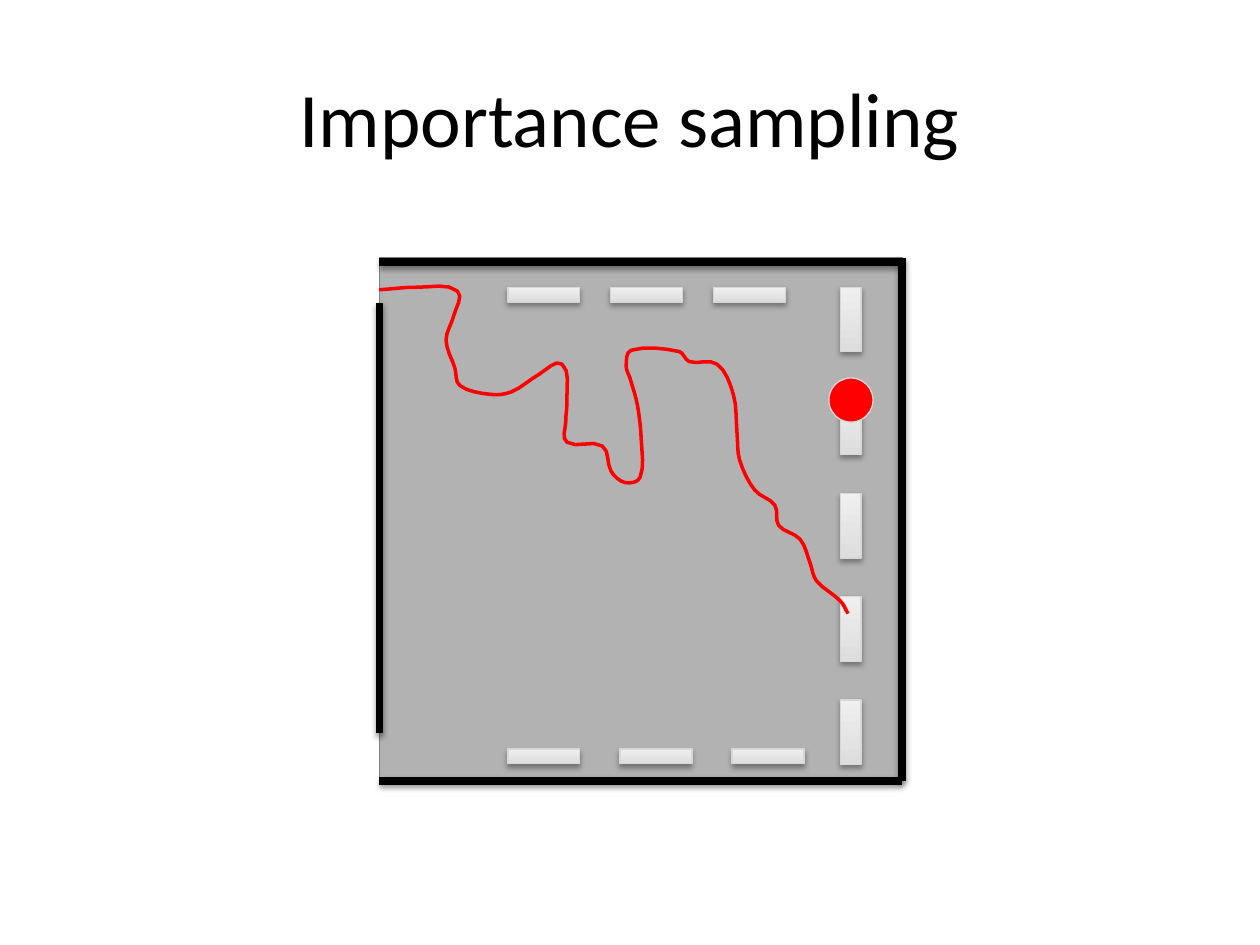
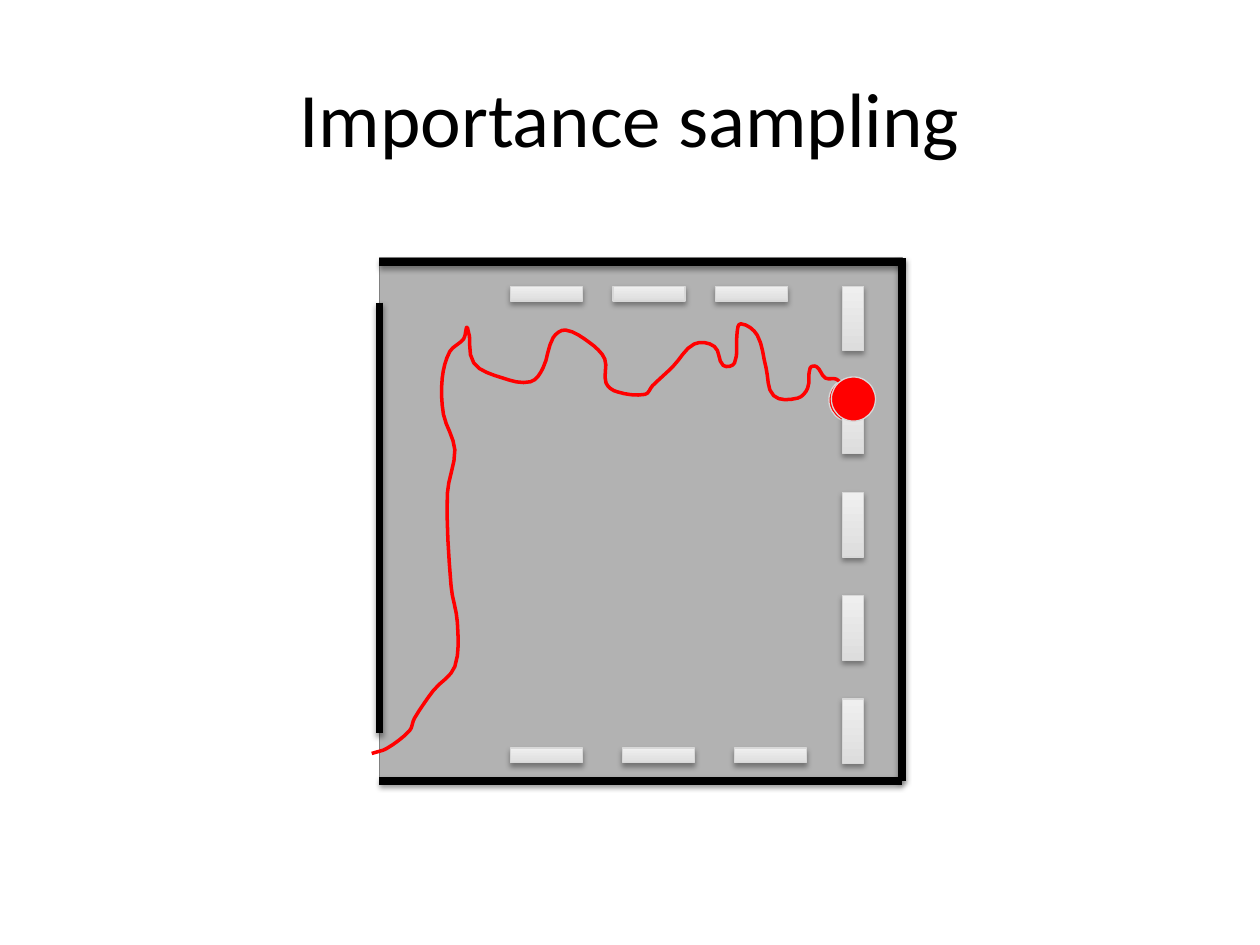
"""Build two slides that show sampled walking paths through a shop floor."""
from math import dist

from lxml import etree
from pptx import Presentation
from pptx.dml.color import RGBColor
from pptx.enum.shapes import MSO_CONNECTOR, MSO_SHAPE
from pptx.enum.text import MSO_ANCHOR, PP_ALIGN
from pptx.oxml.ns import qn
from pptx.util import Cm, Pt

RECT, OVAL = MSO_SHAPE.RECTANGLE, MSO_SHAPE.OVAL
STRAIGHT = MSO_CONNECTOR.STRAIGHT
MIDDLE, CENTER = MSO_ANCHOR.MIDDLE, PP_ALIGN.CENTER

THEME = {
    "font": "Calibri", "title_size": Pt(44),
    "black": RGBColor.from_string("000000"),
    "floor": RGBColor.from_string("B2B2B2"),
    "floor_edge": RGBColor.from_string("808080"),
    "red": RGBColor.from_string("FF0000"),
    "edge": RGBColor.from_string("D8D8D8"),
    "shelf_low": RGBColor.from_string("DDDDDD"),
    "shelf_high": RGBColor.from_string("EFEFEF"),
    "thin_line": Pt(0.75), "trail_line": Pt(2), "wall_line": Pt(4.5),
}
TITLE_FRAME = {"left": Cm(1.27), "top": Cm(0.76), "width": Cm(22.86), "height": Cm(3.18)}
TITLE_FONT = {"name": THEME["font"], "size": THEME["title_size"]}
WALL_SHADOW = {"alpha": 38000, "drop": Pt(1.6)}
SHELF_SHADOW = {"alpha": 35000, "drop": Pt(1.8)}

LEFT, TOP, SIDE = 7.65, 5.2, 10.54
RIGHT, BOTTOM = LEFT + SIDE, TOP + SIDE
DOOR = 0.93
WALLS = {
    "left, between two doors": (LEFT, TOP + DOOR - 0.03, LEFT, BOTTOM - DOOR - 0.03),
    "right": (RIGHT, TOP, RIGHT, BOTTOM),
    "bottom": (LEFT, BOTTOM, RIGHT, BOTTOM),
    "top": (LEFT, TOP + 0.08, RIGHT, TOP + 0.08),
}

LONG, SHORT = 1.45, 0.3
ROW_X, TOP_ROW_Y, BOTTOM_ROW_Y = 10.24, 5.79, 15.1
TOP_STEP, BOTTOM_STEP = 2.07, 2.26
COLUMN_X, COLUMN_STEP = 16.94, 2.08
shelves = [(COLUMN_X, TOP_ROW_Y + i * COLUMN_STEP, 0.42, 1.3) for i in range(5)]
for y, step in ((TOP_ROW_Y, TOP_STEP), (BOTTOM_ROW_Y, BOTTOM_STEP)):
    shelves += [(ROW_X + i * step, y, LONG, SHORT) for i in range(3)]

BLOCKS = {
    "floor": {"kind": RECT, "boxes": [(LEFT, TOP, SIDE, SIDE)], "fill": [THEME["floor"]],
              "edge": THEME["floor_edge"], "shadow": None},
    "shelves": {"kind": RECT, "boxes": shelves,
                "fill": [THEME["shelf_low"], THEME["shelf_high"]],
                "edge": THEME["edge"], "shadow": SHELF_SHADOW},
    "ball": {"kind": OVAL, "boxes": [(16.71, 7.62, 0.89, 0.89)], "fill": [THEME["red"]],
             "edge": THEME["edge"], "shadow": None},
}

UNIT_CM = 0.0254
FINE = 10
CURVE_STEPS = 4
WANDERING_LEGS = {
    "in by the upper door": [(301, 230), (332, 228), (363, 231), (360, 251)],
    "first dip": [(354, 270), (361, 292), (365, 306), (389, 313), (406, 311)],
    "up to the middle": [(428, 297), (446, 289), (450, 315), (449, 335)],
    "second dip": [(450, 351), (478, 354), (485, 374), (496, 383), (508, 379)],
    "back up": [(509, 350), (506, 322), (500, 300), (497, 291), (501, 278)],
    "along the top": [(539, 279), (547, 287), (569, 289)],
    "down to the fourth shelf": [
        (582, 313), (585, 344), (587, 365), (599, 389), (615, 401), (618, 417),
        (635, 428), (643, 447), (648, 461), (667, 477), (673, 487)],
}
DIRECT_LEGS = {
    "out from the ball": [(670, 308), (664, 301), (655, 300), (648, 291), (643, 292)],
    "first dip": [(641, 308), (633, 316), (614, 314), (608, 292), (601, 266)],
    "first peak": [(588, 257), (585, 264), (583, 288), (574, 290), (567, 275)],
    "second dip": [(551, 273), (534, 291), (518, 306), (512, 313), (490, 311)],
    "second peak": [(481, 304), (480, 285), (468, 272), (449, 262), (439, 268)],
    "last dip": [(431, 292), (421, 303), (399, 300), (376, 288)],
    "turn at the corner": [(371, 260), (368, 269), (357, 279), (351, 300)],
    "down the left side": [(352, 329), (361, 357), (355, 392), (358, 465),
                           (363, 494), (361, 529), (344, 548)],
    "out by the lower door": [(329, 570), (325, 580), (307, 594), (295, 598)],
}

HOME, NUDGED = (0, 0), (0.05, -0.02)
SLIDES = [
    {"legs": WANDERING_LEGS,
     "layers": [("shelves", HOME), ("ball", HOME), ("trail", HOME)]},
    {"legs": DIRECT_LEGS,
     "layers": [("ball", HOME), ("trail", HOME), ("shelves", NUDGED), ("ball", NUDGED)]},
]


def add_shadow(sp, alpha, drop):
    """Give a shape or connector a soft black shadow below it."""
    effects = etree.SubElement(sp._element.spPr, qn("a:effectLst"))
    shadow = etree.SubElement(effects, qn("a:outerShdw"), blurRad=str(Pt(3.1)),
                              dist=str(drop), dir="5400000", rotWithShape="0")
    color = etree.SubElement(shadow, qn("a:srgbClr"), val=str(THEME["black"]))
    etree.SubElement(color, qn("a:alpha"), val=str(alpha))


def smooth(points):
    """Return points on a curve that runs through all the given points."""
    padded = [points[0], *points, points[-1]]
    headings = []
    for before, after in zip(padded, padded[2:]):
        span = dist(before, after)
        headings.append([(b - a) / span for a, b in zip(before, after)])
    curve = [points[0]]
    for i, (start, end) in enumerate(zip(points, points[1:])):
        reach = dist(start, end) / 3
        for t in (n / CURVE_STEPS for n in range(1, CURVE_STEPS + 1)):
            curve.append(tuple(
                (1 - t) ** 3 * a + 3 * (1 - t) ** 2 * t * (a + u * reach)
                + 3 * (1 - t) * t ** 2 * (b - v * reach) + t ** 3 * b
                for a, b, u, v in zip(start, end, headings[i], headings[i + 1])))
    return curve


prs = Presentation()
prs.slide_width, prs.slide_height = Cm(25.4), Cm(19.05)

for content in SLIDES:
    s = prs.slides.add_slide(prs.slide_layouts[5])
    title = s.shapes.title
    for name, value in TITLE_FRAME.items():
        setattr(title, name, value)
    tf = title.text_frame
    tf.vertical_anchor = MIDDLE
    p = tf.paragraphs[0]
    p.alignment = CENTER
    r = p.add_run()
    r.text = "Importance sampling"
    for name, value in TITLE_FONT.items():
        setattr(r.font, name, value)
    r.font.color.rgb = THEME["black"]

    for layer, (dx, dy) in [("floor", HOME), ("walls", HOME), *content["layers"]]:
        if layer == "walls":
            for ends in WALLS.values():
                wall = s.shapes.add_connector(STRAIGHT, *(Cm(v) for v in ends))
                wall.line.color.rgb = THEME["black"]
                wall.line.width = THEME["wall_line"]
                add_shadow(wall, **WALL_SHADOW)
        elif layer == "trail":
            waypoints = [point for leg in content["legs"].values() for point in leg]
            curve = [(round(x * FINE), round(y * FINE)) for x, y in smooth(waypoints)]
            builder = s.shapes.build_freeform(*curve[0], scale=Cm(UNIT_CM) / FINE)
            builder.add_line_segments(curve[1:], close=False)
            trail = builder.convert_to_shape()
            trail.fill.background()
            trail.line.color.rgb = THEME["red"]
            trail.line.width = THEME["trail_line"]
            trail.shadow.inherit = False
        else:
            style = BLOCKS[layer]
            for x, y, w, h in style["boxes"]:
                sp = s.shapes.add_shape(style["kind"], Cm(x + dx), Cm(y + dy), Cm(w), Cm(h))
                if len(style["fill"]) == 2:
                    sp.fill.gradient()
                    sp.fill.gradient_angle = 90
                    for stop, color in zip(sp.fill.gradient_stops, style["fill"]):
                        stop.color.rgb = color
                else:
                    sp.fill.solid()
                    sp.fill.fore_color.rgb = style["fill"][0]
                sp.line.color.rgb = style["edge"]
                sp.line.width = THEME["thin_line"]
                if style["shadow"]:
                    add_shadow(sp, **style["shadow"])
                else:
                    sp.shadow.inherit = False

prs.save("out.pptx")
